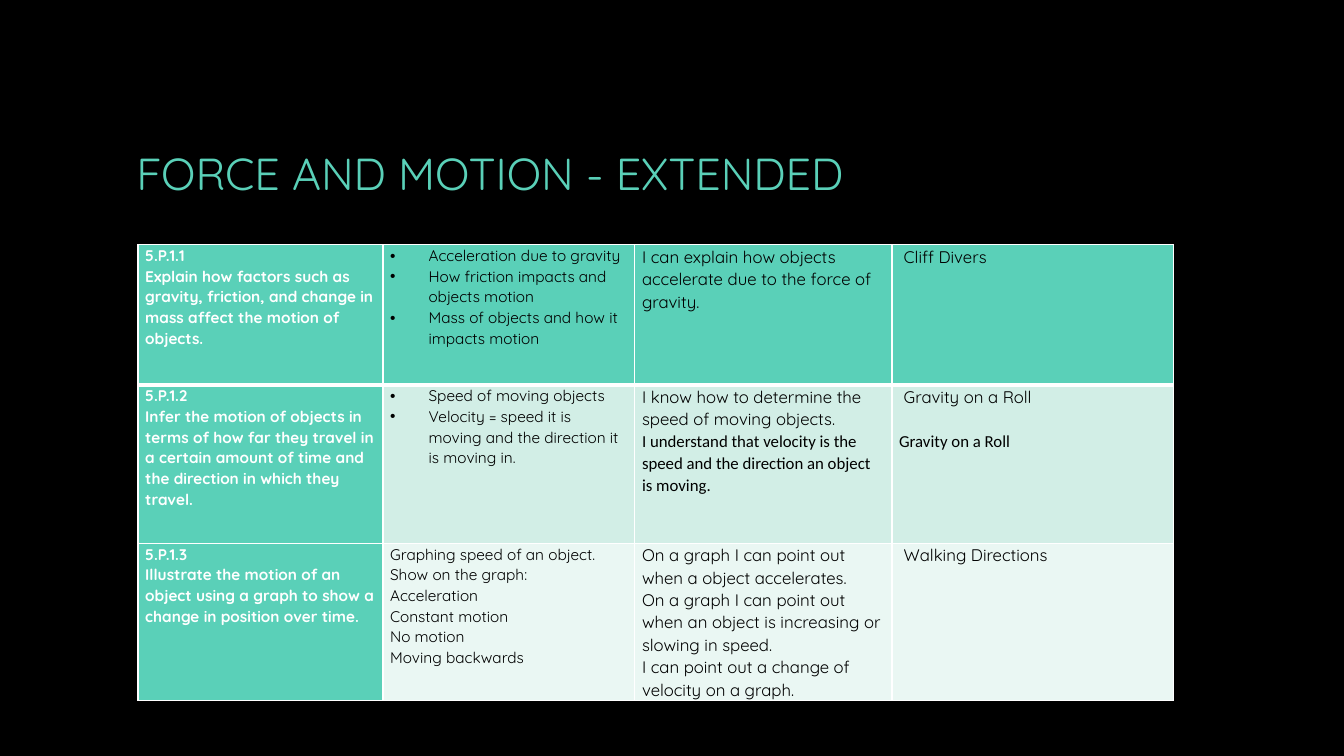
from lxml.etree import SubElement
from pptx import Presentation
from pptx.dml.color import RGBColor
from pptx.enum.text import MSO_ANCHOR, PP_ALIGN
from pptx.oxml.ns import qn
from pptx.util import Cm, Pt

BLACK = RGBColor(0x00, 0x00, 0x00)
WHITE = RGBColor(0xFF, 0xFF, 0xFF)
TEAL = RGBColor(0x5A, 0xD0, 0xB8)
MINT = RGBColor(0xD2, 0xEE, 0xE6)
PALE = RGBColor(0xEA, 0xF7, 0xF3)

ROW_FILLS = [TEAL, MINT, PALE]
ROW_HEIGHTS = [3.53, 3.99, 3.5]
COLUMN_WIDTHS = [6.17, 6.35, 6.48, 7.09]
COLUMN_SIZES = [11, 11, 12, 12]
BULLET_ROWS = 2
CALIBRI_TEXTS = [
    "I understand that velocity is the speed and the direction an object is moving.",
    "Gravity on a Roll",
]

STANDARDS = [
    [
        ["5.P.1.1",
         "Explain how factors such as gravity, friction, and change in mass "
         "affect the motion of objects."],
        ["Acceleration due to gravity",
         "How friction impacts and objects motion",
         "Mass of objects and how it impacts motion"],
        ["I can explain how objects accelerate due to the force of gravity."],
        [" Cliff Divers"],
    ],
    [
        ["5.P.1.2",
         "Infer the motion of objects in terms of how far they travel in a "
         "certain amount of time and the direction in which they travel."],
        ["Speed of moving objects",
         "Velocity = speed it is moving and the direction it is moving in."],
        ["I know how to determine the speed of moving objects.", CALIBRI_TEXTS[0]],
        [" Gravity on a Roll", CALIBRI_TEXTS[1]],
    ],
    [
        ["5.P.1.3",
         "Illustrate the motion of an object using a graph to show a change "
         "in position over time."],
        ["Graphing speed of an object.", "Show on the graph:", "Acceleration",
         "Constant motion", "No motion", "Moving backwards"],
        ["On a graph I can point out when a object accelerates.",
         "On a graph I can point out when an object is increasing or slowing in speed.",
         "I can point out a change of velocity on a graph."],
        [" Walking Directions"],
    ],
]


def set_font(para, size, color, name="Quicksand", bold=False):
    """Format a whole paragraph."""
    font = para.font
    font.name, font.size, font.bold = name, Pt(size), bold
    font.color.rgb = color


def add_bullet(para):
    """Give a paragraph a round bullet with a hanging indent."""
    properties = para._p.get_or_add_pPr()
    properties.set("marL", str(Cm(0.97)))
    properties.set("indent", str(-Cm(0.97)))
    SubElement(properties, qn("a:buFont"), typeface="Arial")
    SubElement(properties, qn("a:buChar"), char="•")


def add_borders(cell, top, bottom):
    """Draw white lines on the four sides of a cell."""
    properties = cell._tc.get_or_add_tcPr()
    for side, width in (("L", 1), ("R", 1), ("T", top), ("B", bottom)):
        line = SubElement(properties, qn(f"a:ln{side}"), w=str(Pt(width)))
        fill = SubElement(line, qn("a:solidFill"))
        SubElement(fill, qn("a:srgbClr"), val=str(WHITE))


def fill_cell(cell, texts, row, column):
    """Write and format one table cell."""
    heading = column == 0
    add_borders(cell, 3 if row == 1 else 1, 3 if row == 0 else 1)
    cell.fill.solid()
    cell.fill.fore_color.rgb = TEAL if heading else ROW_FILLS[row]
    cell.margin_left = cell.margin_right = Cm(0.18)
    cell.margin_top = cell.margin_bottom = Cm(0)
    frame = cell.text_frame
    for index, text in enumerate(texts):
        para = frame.add_paragraph() if index else frame.paragraphs[0]
        para.text = text
        para.line_spacing = 1.07
        if column == 3 and index:
            para.space_before = Pt(16)
        if column == 1 and row < BULLET_ROWS:
            add_bullet(para)
        set_font(para, COLUMN_SIZES[column], WHITE if heading else BLACK,
                 "Calibri" if text in CALIBRI_TEXTS else "Quicksand", heading)


def add_title(page, text):
    """Place and format the slide title."""
    title = page.shapes.title
    title.left, title.top, title.width, title.height = (
        Cm(3.18), Cm(1.7), Cm(27.51), Cm(5.28))
    frame = title.text_frame
    frame.text = text
    frame.vertical_anchor = MSO_ANCHOR.MIDDLE
    para = frame.paragraphs[0]
    para.alignment = PP_ALIGN.LEFT
    set_font(para, 32, TEAL)


def add_standards_table(page):
    """Add the table of standards, topics, goals and activities."""
    table = page.shapes.add_table(
        len(ROW_HEIGHTS), len(COLUMN_WIDTHS), Cm(3.48), Cm(6.17),
        Cm(sum(COLUMN_WIDTHS)), Cm(sum(ROW_HEIGHTS))).table
    table.first_row = table.horz_banding = False
    for column, width in zip(table.columns, COLUMN_WIDTHS):
        column.width = Cm(width)
    for row, height in zip(table.rows, ROW_HEIGHTS):
        row.height = Cm(height)
    for row, standard in enumerate(STANDARDS):
        for column, texts in enumerate(standard):
            fill_cell(table.cell(row, column), texts, row, column)


def main():
    """Build the slide and save it."""
    deck = Presentation()
    deck.slide_width, deck.slide_height = Cm(33.87), Cm(19.05)
    page = deck.slides.add_slide(deck.slide_layouts[5])
    page.background.fill.solid()
    page.background.fill.fore_color.rgb = BLACK
    add_title(page, "FORCE AND MOTION - EXTENDED")
    add_standards_table(page)
    deck.save("out.pptx")


if __name__ == "__main__":
    main()
